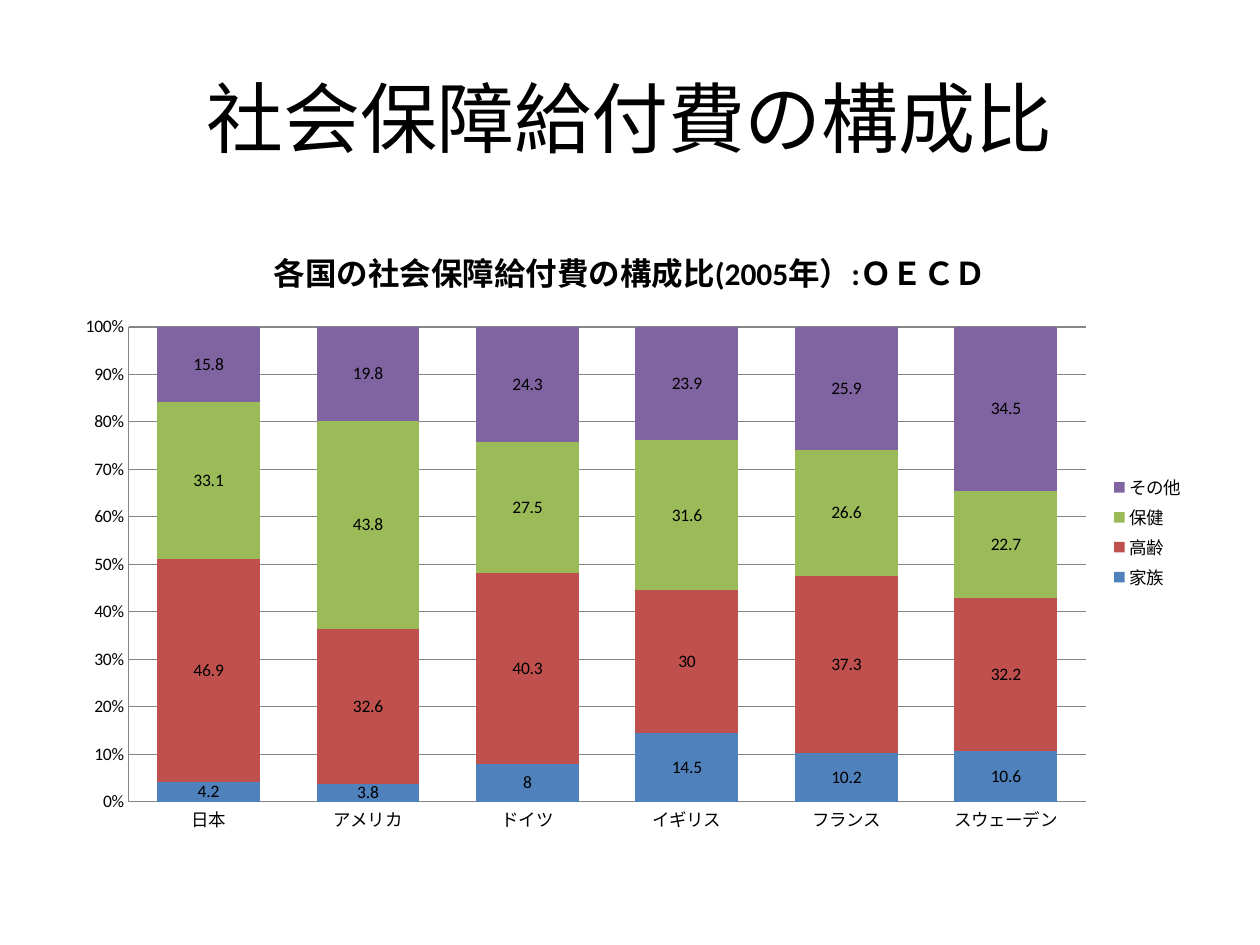
from dataclasses import dataclass

from pptx import Presentation
from pptx.chart.data import CategoryChartData
from pptx.dml.color import RGBColor
from pptx.enum.chart import XL_CHART_TYPE, XL_LABEL_POSITION, XL_LEGEND_POSITION, XL_TICK_MARK
from pptx.enum.text import MSO_ANCHOR, PP_ALIGN
from pptx.util import Inches, Pt


@dataclass(frozen=True)
class Theme:
    """Colours, font and type sizes of the slide."""
    font: str = "Calibri"
    text: str = "000000"
    rule: str = "868686"
    title_size: int = 44
    chart_title_size: int = 18
    chart_size: int = 10


THEME = Theme()
COUNTRIES = ["日本", "アメリカ", "ドイツ", "イギリス", "フランス", "スウェーデン"]
BENEFITS = {
    "家族": ("4F81BD", [4.2, 3.8, 8, 14.5, 10.2, 10.6]),
    "高齢": ("C0504D", [46.9, 32.6, 40.3, 30, 37.3, 32.2]),
    "保健": ("9BBB59", [33.1, 43.8, 27.5, 31.6, 26.6, 22.7]),
    "その他": ("8064A2", [15.8, 19.8, 24.3, 23.9, 25.9, 34.5]),
}


def apply_format(target, values):
    """Set each named attribute of the target."""
    for name, value in values.items():
        setattr(target, name, value)


def style_font(font, size, bold=False):
    """Give a font the theme's face and colour."""
    apply_format(font, {"name": THEME.font, "size": Pt(size), "bold": bold})
    font.color.rgb = RGBColor.from_string(THEME.text)


def style_line(line):
    """Draw an axis or grid line in the rule colour."""
    line.width = Pt(0.75)
    line.color.rgb = RGBColor.from_string(THEME.rule)


def add_title(slide, box, text):
    """Place the slide title centred in its box."""
    frame = slide.shapes.add_textbox(*box).text_frame
    apply_format(frame, {"word_wrap": True, "vertical_anchor": MSO_ANCHOR.MIDDLE})
    paragraph = frame.paragraphs[0]
    apply_format(paragraph, {"text": text, "alignment": PP_ALIGN.CENTER})
    style_font(paragraph.runs[0].font, THEME.title_size)


def style_axes(chart):
    """Format the country axis and the percentage axis."""
    for axis in (chart.category_axis, chart.value_axis):
        apply_format(axis, {"major_tick_mark": XL_TICK_MARK.NONE,
                            "minor_tick_mark": XL_TICK_MARK.NONE})
        style_line(axis.format.line)
    apply_format(chart.value_axis, {"has_major_gridlines": True, "minimum_scale": 0,
                                    "maximum_scale": 1, "major_unit": 0.1})
    style_line(chart.value_axis.major_gridlines.format.line)
    apply_format(chart.value_axis.tick_labels,
                 {"number_format": "0%", "number_format_is_linked": False})


def style_series(series, color):
    """Fill one series and label its values."""
    series.format.fill.solid()
    series.format.fill.fore_color.rgb = RGBColor.from_string(color)
    labels = series.data_labels
    apply_format(labels, {"show_value": True, "position": XL_LABEL_POSITION.CENTER})
    style_font(labels.font, THEME.chart_size)


def add_benefit_chart(slide, box, title):
    """Place the stacked chart of benefit shares by country."""
    data = CategoryChartData()
    data.categories = COUNTRIES
    for name, (_, values) in BENEFITS.items():
        data.add_series(name, values)
    chart = slide.shapes.add_chart(XL_CHART_TYPE.COLUMN_STACKED_100, *box, data).chart
    style_font(chart.font, THEME.chart_size)
    apply_format(chart, {"has_title": True, "has_legend": True})
    paragraph = chart.chart_title.text_frame.paragraphs[0]
    paragraph.text = title
    style_font(paragraph.runs[0].font, THEME.chart_title_size, bold=True)
    apply_format(chart.legend, {"position": XL_LEGEND_POSITION.RIGHT,
                                "include_in_layout": False})
    style_axes(chart)
    plot = chart.plots[0]
    apply_format(plot, {"gap_width": 55, "overlap": 100, "vary_by_categories": False})
    for series, (color, _) in zip(plot.series, BENEFITS.values()):
        style_series(series, color)


def main():
    """Build and save the presentation."""
    presentation = Presentation()
    apply_format(presentation, {"slide_width": Inches(10), "slide_height": Inches(7.5)})
    slide = presentation.slides.add_slide(presentation.slide_layouts[6])
    left, width = Inches(0.5), Inches(9)
    add_title(slide, (left, Inches(0.3), width, Inches(1.25)), "社会保障給付費の構成比")
    add_benefit_chart(slide, (left, Inches(1.75), width, Inches(4.95)),
                      "各国の社会保障給付費の構成比(2005年）:ＯＥＣＤ")
    presentation.save("out.pptx")


if __name__ == "__main__":
    main()
